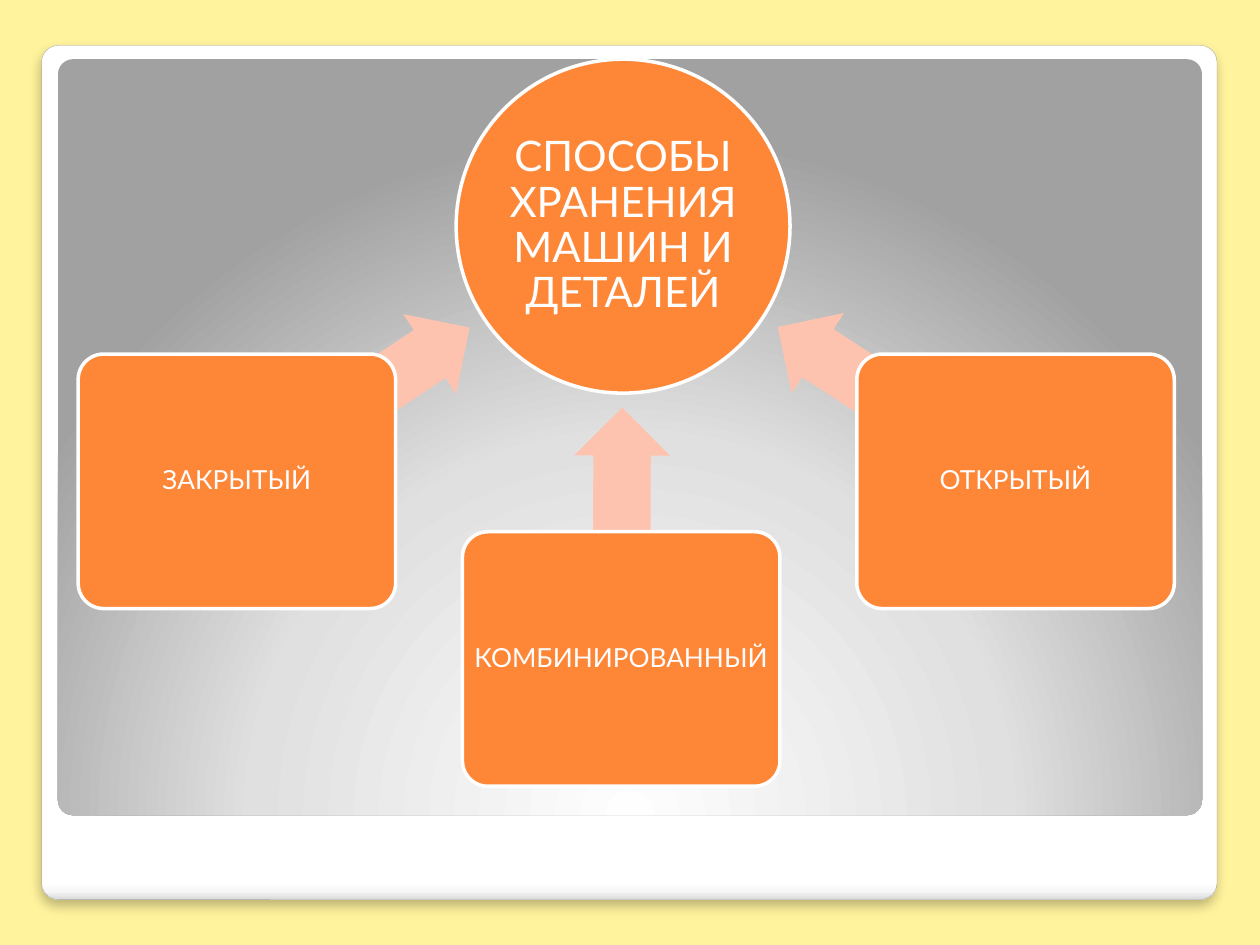
from dataclasses import dataclass

from lxml import etree
from pptx import Presentation
from pptx.dml.color import RGBColor
from pptx.enum import shapes, text
from pptx.oxml import ns
from pptx.util import Inches, Pt

COLORS = {
    "page": "FFF39D",
    "frame_line": "A4A4A4",
    "light": "FFFEFF",
    "node": "FE8637",
    "arrow": "FEC3AE",
    "shadow": "000000",
}
FRAME_STOPS = [(0, "FFFFFF"), (98, "FFFFFF"), (99, "F7F7F7"), (100, "DADADA")]
PANEL_STOPS = [(0, "FFFEFF"), (55, "E1E0E1"), (100, "A2A1A2")]
FONT = "Lato"
NODE_W, NODE_H = 2.52, 2.02
ARROW_H = 0.76
MSO = shapes.MSO_SHAPE


@dataclass
class Method:
    label: str
    left: float
    top: float
    arrow_left: float
    arrow_top: float
    arrow_width: float
    angle: float


METHODS = [
    Method("ЗАКРЫТЫЙ", 0.62, 2.81, 1.7, 2.83, 2.21, 146.5),
    Method("КОМБИНИРОВАННЫЙ", 3.67, 4.22, 3.94, 3.85, 1.99, 90.2),
    Method("ОТКРЫТЫЙ", 6.8, 2.81, 5.99, 2.83, 2.25, 33.1),
]


def rgb(name: str) -> RGBColor:
    return RGBColor.from_string(COLORS[name])


def add_shape(s, kind, left, top, width, height, *, fill=None, line=None,
              line_width=2, adj=(), angle=0):
    sp = s.shapes.add_shape(kind, Inches(left), Inches(top), Inches(width), Inches(height))
    sp.shadow.inherit = False
    sp.rotation = angle
    for i, value in enumerate(adj):
        sp.adjustments[i] = value
    if fill:
        sp.fill.solid()
        sp.fill.fore_color.rgb = rgb(fill)
    if line:
        sp.line.color.rgb = rgb(line)
        sp.line.width = Pt(line_width)
    else:
        sp.line.fill.background()
    return sp


def set_gradient(sp, stops: list[tuple[int, str]], direction: str) -> None:
    marks = "".join(
        f'<a:gs pos="{pos * 1000}"><a:srgbClr val="{color}"/></a:gs>' for pos, color in stops
    )
    grad = etree.fromstring(
        f'<a:gradFill {ns.nsdecls("a")} rotWithShape="1">'
        f"<a:gsLst>{marks}</a:gsLst>{direction}</a:gradFill>"
    )
    sp._element.spPr.find(ns.qn("a:prstGeom")).addnext(grad)


def set_shadow(sp, *, alpha: int, blur: float, distance: float, angle: int) -> None:
    effects = sp._element.spPr.find(ns.qn("a:effectLst"))
    effects.append(etree.fromstring(
        f'<a:outerShdw {ns.nsdecls("a")} blurRad="{Pt(blur)}" dist="{Pt(distance)}" '
        f'dir="{angle * 60000}" algn="ctr" rotWithShape="0">'
        f'<a:srgbClr val="{COLORS["shadow"]}"><a:alpha val="{alpha * 1000}"/></a:srgbClr>'
        "</a:outerShdw>"
    ))


def write(sp, label: str, *, size: float, inset: float = 0) -> None:
    tf = sp.text_frame
    tf.word_wrap = True
    tf.vertical_anchor = text.MSO_ANCHOR.MIDDLE
    tf.margin_left = tf.margin_right = tf.margin_top = tf.margin_bottom = Inches(inset)
    p = tf.paragraphs[0]
    p.alignment = text.PP_ALIGN.CENTER
    p.line_spacing = 0.9
    r = p.add_run()
    r.text = label
    r.font.name = FONT
    r.font.size = Pt(size)
    r.font.color.rgb = rgb("light")


def add_background(s) -> None:
    s.background.fill.solid()
    s.background.fill.fore_color.rgb = rgb("page")
    frame = add_shape(s, MSO.ROUNDED_RECTANGLE, 0.33, 0.36, 9.33, 6.78,
                      line="frame_line", line_width=0.16, adj=(0.02,))
    set_gradient(frame, FRAME_STOPS, '<a:lin ang="5400000" scaled="0"/>')
    set_shadow(frame, alpha=25, blur=6, distance=4, angle=90)
    panel = add_shape(s, MSO.ROUNDED_RECTANGLE, 0.46, 0.47, 9.08, 6, adj=(0.02,))
    set_gradient(panel, PANEL_STOPS,
                 '<a:path path="circle">'
                 '<a:fillToRect l="50000" t="175000" r="50000" b="-75000"/></a:path>')


def add_method(s, method: Method) -> None:
    add_shape(s, MSO.LEFT_ARROW, method.arrow_left, method.arrow_top, method.arrow_width,
              ARROW_H, fill="arrow", adj=(0.6, 0.5), angle=method.angle)
    node = add_shape(s, MSO.ROUNDED_RECTANGLE, method.left, method.top, NODE_W, NODE_H,
                     fill="node", line="light", adj=(0.1,))
    write(node, method.label, size=15)


def main() -> None:
    prs = Presentation()
    prs.slide_width, prs.slide_height = Inches(10), Inches(7.5)
    s = prs.slides.add_slide(prs.slide_layouts[6])
    add_background(s)
    hub = add_shape(s, MSO.OVAL, 3.62, 0.47, 2.65, 2.65, fill="node", line="light")
    write(hub, "СПОСОБЫ ХРАНЕНИЯ МАШИН И ДЕТАЛЕЙ", size=24, inset=0.02)
    for method in METHODS:
        add_method(s, method)
    prs.save("out.pptx")


if __name__ == "__main__":
    main()
